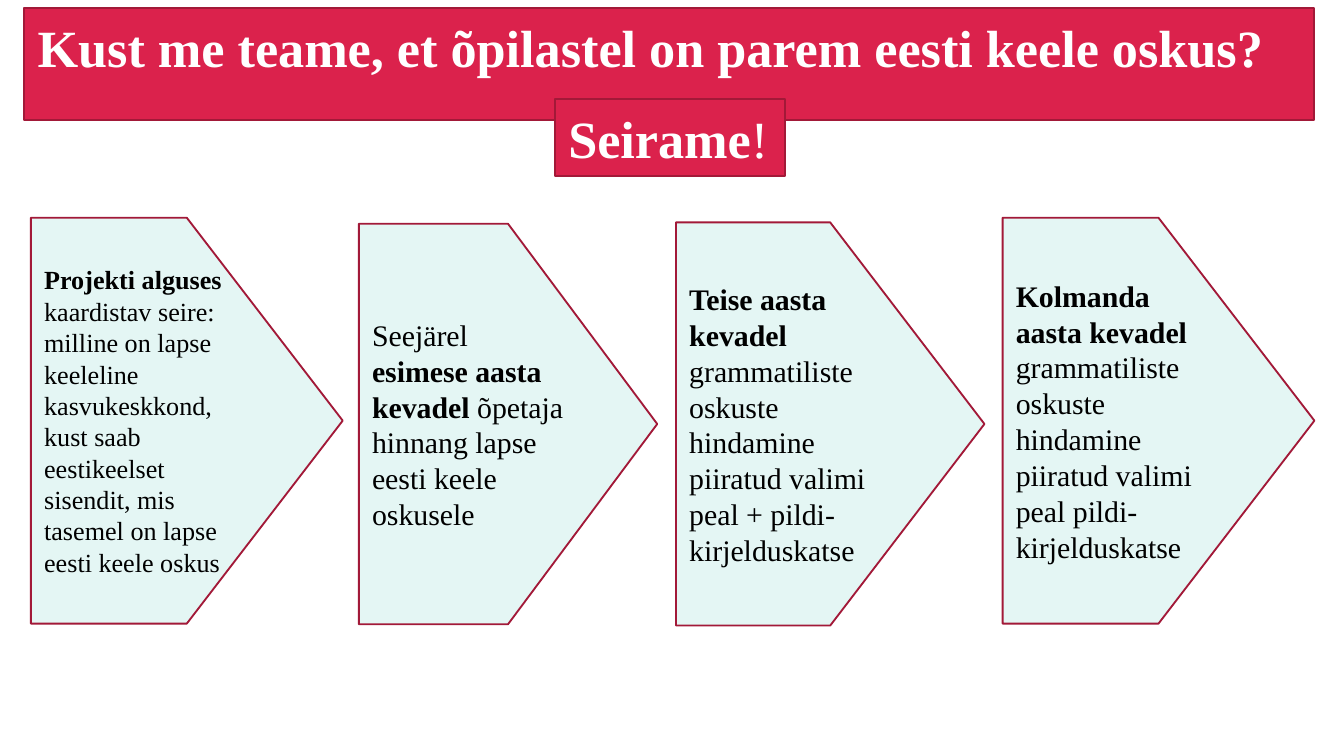
from dataclasses import dataclass
from typing import NamedTuple

from pptx import Presentation
from pptx.dml.color import RGBColor
from pptx.enum.shapes import MSO_SHAPE as Preset
from pptx.enum.text import MSO_ANCHOR as Anchor, MSO_AUTO_SIZE as AutoSize, PP_ALIGN as Align
from pptx.util import Emu, Pt

EMU_PER_PX = 4572  # 200 px to the inch
TITLE_ONLY = 5


@dataclass(frozen=True)
class Theme:
    font: str = "Times New Roman"
    banner_fill: RGBColor = RGBColor(0xDB, 0x22, 0x4C)
    stage_fill: RGBColor = RGBColor(0xE4, 0xF6, 0xF4)
    outline: RGBColor = RGBColor(0xA2, 0x19, 0x38)
    banner_text: RGBColor = RGBColor(0xFF, 0xFF, 0xFF)
    stage_text: RGBColor = RGBColor(0x00, 0x00, 0x00)
    banner_size: int = 28
    stage_size: int = 16
    small_size: int = 14
    line_width: int = 1


THEME = Theme()


class Box(NamedTuple):
    left: int
    top: int
    width: int
    height: int


class TextRun(NamedTuple):
    text: str
    bold: bool = False


class Stage(NamedTuple):
    box: Box
    runs: list[TextRun]
    size: int = THEME.stage_size


TITLE_BOX = Box(36, 12, 1920, 114)
TITLE = [TextRun("Kust me teame, et õpilastel on parem eesti keele oskus?", True)]
ANSWER_BOX = Box(826, 148, 342, 114)
ANSWER = [TextRun("Seirame", True), TextRun("!")]

STAGES = [
    Stage(Box(46, 324, 464, 604), [
        TextRun("Projekti alguses ", True),
        TextRun("kaardistav seire: milline on lapse keeleline kasvukeskkond, "
                "kust saab eestikeelset sisendit, mis tasemel on lapse eesti keele oskus"),
    ], THEME.small_size),
    Stage(Box(534, 333, 444, 596), [
        TextRun("Seejärel "),
        TextRun("esimese aasta kevadel ", True),
        TextRun("õpetaja hinnang lapse eesti keele oskusele"),
    ]),
    Stage(Box(1006, 331, 459, 600), [
        TextRun("Teise aasta kevadel ", True),
        TextRun("grammatiliste oskuste hindamine piiratud valimi peal + pildi-kirjelduskatse"),
    ]),
    Stage(Box(1492, 324, 464, 604), [
        TextRun("Kolmanda aasta kevadel ", True),
        TextRun("grammatiliste oskuste hindamine piiratud valimi peal pildi-kirjelduskatse"),
    ]),
]


def px(length: int) -> Emu:
    return Emu(length * EMU_PER_PX)


def add_box(slide, preset: Preset, box: Box):
    shape = slide.shapes.add_shape(preset, *map(px, box))
    shape.shadow.inherit = False
    return shape


def paint(shape, fill: RGBColor) -> None:
    shape.fill.solid()
    shape.fill.fore_color.rgb = fill
    shape.line.color.rgb = THEME.outline
    shape.line.width = Pt(THEME.line_width)


def write(shape, runs: list[TextRun], size: int, color: RGBColor) -> None:
    paragraph = shape.text_frame.paragraphs[0]
    paragraph.alignment = Align.LEFT
    for text, bold in runs:
        run = paragraph.add_run()
        run.text = text
        run.font.name = THEME.font
        run.font.size = Pt(size)
        run.font.bold = bold
        run.font.color.rgb = color


def format_banner(shape, runs: list[TextRun], wrap: bool) -> None:
    paint(shape, THEME.banner_fill)
    frame = shape.text_frame
    frame.word_wrap = wrap
    frame.auto_size = AutoSize.SHAPE_TO_FIT_TEXT
    frame.vertical_anchor = Anchor.TOP
    write(shape, runs, THEME.banner_size, THEME.banner_text)


def add_stage(slide, stage: Stage) -> None:
    shape = add_box(slide, Preset.PENTAGON, stage.box)
    paint(shape, THEME.stage_fill)
    shape.text_frame.word_wrap = True
    shape.text_frame.vertical_anchor = Anchor.MIDDLE
    write(shape, stage.runs, stage.size, THEME.stage_text)


def main() -> None:
    presentation = Presentation()
    presentation.slide_width, presentation.slide_height = px(2000), px(1125)
    slide = presentation.slides.add_slide(presentation.slide_layouts[TITLE_ONLY])

    # Question in the title and its answer below
    title = slide.shapes.title
    title.left, title.top, title.width, title.height = map(px, TITLE_BOX)
    format_banner(title, TITLE, wrap=True)
    format_banner(add_box(slide, Preset.RECTANGLE, ANSWER_BOX), ANSWER, wrap=False)

    # Monitoring stages from left to right
    for stage in STAGES:
        add_stage(slide, stage)

    presentation.save("out.pptx")


if __name__ == "__main__":
    main()
